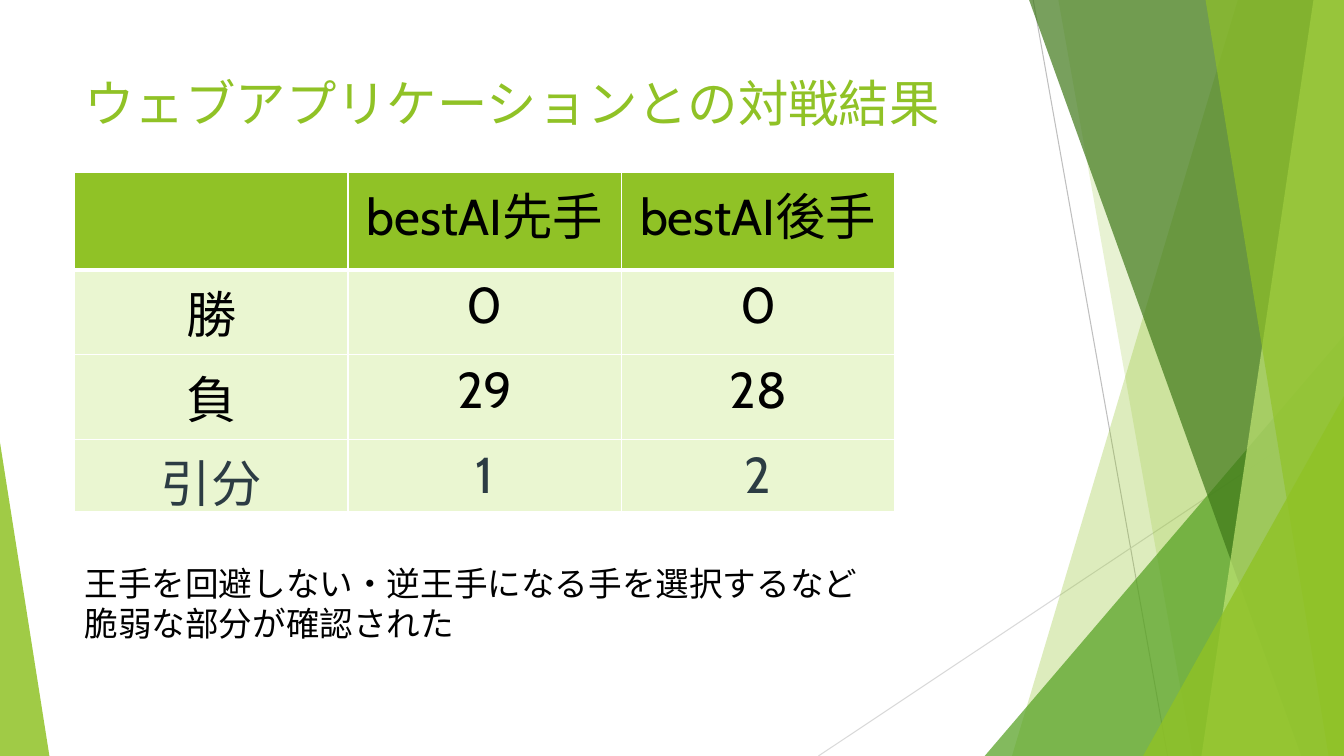
"""Build a slide with match results against a web application."""
from lxml import etree
from pptx import Presentation
from pptx.dml.color import RGBColor
from pptx.enum.shapes import MSO_CONNECTOR, MSO_SHAPE
from pptx.enum.text import PP_ALIGN
from pptx.oxml.ns import qn
from pptx.util import Pt

STRAIGHT = MSO_CONNECTOR.STRAIGHT
TRIANGLE = MSO_SHAPE.ISOSCELES_TRIANGLE
CENTER = PP_ALIGN.CENTER

WHITE = RGBColor(0xFF, 0xFF, 0xFF)
BLACK = RGBColor(0, 0, 0)
SLATE = RGBColor(0x2C, 0x3C, 0x43)
LIME = RGBColor(0x90, 0xC2, 0x26)
PALE_LIME = RGBColor(0xEA, 0xF6, 0xD1)
BRIGHT_LIME = RGBColor(0xC0, 0xE4, 0x74)
GREEN = RGBColor(0x54, 0xA0, 0x21)
DARK_GREEN = RGBColor(0x3F, 0x78, 0x19)
GRAY = RGBColor(0xBF, 0xBF, 0xBF)
LIGHT_GRAY = RGBColor(0xD9, 0xD9, 0xD9)

FONT = "Cabin"
WIDTH, HEIGHT = 960, 540
LEFT, CONTENT_WIDTH = 53.3, 586

TITLE = "ウェブアプリケーションとの対戦結果"
CAPTION = "王手を回避しない・逆王手になる手を選択するなど脆弱な部分が確認された"
RESULTS = [
    ["", "bestAI先手", "bestAI後手"],
    ["勝", "0", "0"],
    ["負", "29", "28"],
]
DRAWS = [["引分", "1", "2"]]
TABLES = [
    (123.1, [69.8, 60.5, 60.5], RESULTS, BLACK, True),
    (313.9, [52.6], DRAWS, SLATE, False),
]

LINES = [((738, 0), (834, HEIGHT), GRAY), ((WIDTH, 290), (584.6, HEIGHT), LIGHT_GRAY)]
FACETS = [
    ("band", (884.2, 722.9), LIME, 30),
    ("band", (756, 851.8), LIME, 20),
    ("triangle", (703.4, 239.8, WIDTH, 1), GREEN, 72),
    ("band", (735.1, 929.5), DARK_GREEN, 70),
    ("band", (938.2, 858.2), BRIGHT_LIME, 70),
    ("band", (861.1, 949), LIME, 65),
    ("triangle", (816.5, 283, WIDTH, 1), LIME, 80),
    ("triangle", (0, 316.1, 35.3, 0), LIME, 85),
]


def add_line(slide, start, end, color):
    line = slide.shapes.add_connector(STRAIGHT, *map(Pt, start + end))
    line.line.color.rgb = color
    line.line.width = Pt(0.75)
    etree.SubElement(line.line._get_or_add_ln().getparent(), qn("a:effectLst"))


def add_facet(slide, kind, geometry, color, opacity):
    if kind == "band":
        top_x, bottom_x = geometry
        builder = slide.shapes.build_freeform(Pt(top_x), 0)
        corners = [(WIDTH, 0), (WIDTH, HEIGHT), (bottom_x, HEIGHT)]
        builder.add_line_segments([(Pt(x), Pt(y)) for x, y in corners])
        shape = builder.convert_to_shape()
    else:
        left, top, right, apex = geometry
        shape = slide.shapes.add_shape(
            TRIANGLE, Pt(left), Pt(top), Pt(right - left), Pt(HEIGHT - top))
        shape.adjustments[0] = apex
    shape.shadow.inherit = False
    shape.line.fill.background()
    shape.fill.solid()
    shape.fill.fore_color.rgb = color
    color_element = shape.fill._xPr.find(qn("a:solidFill"))[0]
    etree.SubElement(color_element, qn("a:alpha"), val=str(opacity * 1000))


def format_text(text_frame, size, color, alignment=None):
    for paragraph in text_frame.paragraphs:
        paragraph.alignment = alignment
        for run in paragraph.runs:
            run.font.name = FONT
            run.font.size = Pt(size)
            run.font.color.rgb = color


def add_text(slide, text, top, width, height, size, color):
    box = slide.shapes.add_textbox(Pt(LEFT), Pt(top), Pt(width), Pt(height))
    box.text_frame.word_wrap = True
    box.text_frame.text = text
    format_text(box.text_frame, size, color)


def set_borders(cell, bottom_width):
    properties = cell._tc.get_or_add_tcPr()
    widths = {"lnL": 1, "lnR": 1, "lnT": 1, "lnB": bottom_width}
    for index, (side, width) in enumerate(widths.items()):
        border = etree.Element(qn(f"a:{side}"), w=str(Pt(width)))
        fill = etree.SubElement(border, qn("a:solidFill"))
        etree.SubElement(fill, qn("a:srgbClr"), val=str(WHITE))
        properties.insert(index, border)


def add_results(slide, top, heights, rows, color, has_header):
    columns = len(rows[0])
    frame = slide.shapes.add_table(
        len(rows), columns, Pt(LEFT), Pt(top), Pt(CONTENT_WIDTH), Pt(sum(heights)))
    table = frame.table
    table.first_row = has_header
    table.horz_banding = False
    for column in table.columns:
        column.width = Pt(CONTENT_WIDTH / columns)
    for row_index, (height, values) in enumerate(zip(heights, rows)):
        table.rows[row_index].height = Pt(height)
        is_header = has_header and row_index == 0
        for column_index, value in enumerate(values):
            cell = table.cell(row_index, column_index)
            cell.text_frame.text = value
            format_text(cell.text_frame, 36, color, CENTER)
            for run in cell.text_frame.paragraphs[0].runs:
                run.font.bold = False
            cell.fill.solid()
            cell.fill.fore_color.rgb = LIME if is_header else PALE_LIME
            set_borders(cell, 3 if is_header or not has_header else 1)


def main():
    presentation = Presentation()
    presentation.slide_width = Pt(WIDTH)
    presentation.slide_height = Pt(HEIGHT)
    slide = presentation.slides.add_slide(presentation.slide_layouts[6])
    for line in LINES:
        add_line(slide, *line)
    for facet in FACETS:
        add_facet(slide, *facet)
    add_text(slide, TITLE, 48.2, 676.8, 103.7, 36, LIME)
    for table in TABLES:
        add_results(slide, *table)
    add_text(slide, CAPTION, 398.2, CONTENT_WIDTH, 65.5, 24, BLACK)
    presentation.save("out.pptx")


if __name__ == "__main__":
    main()
